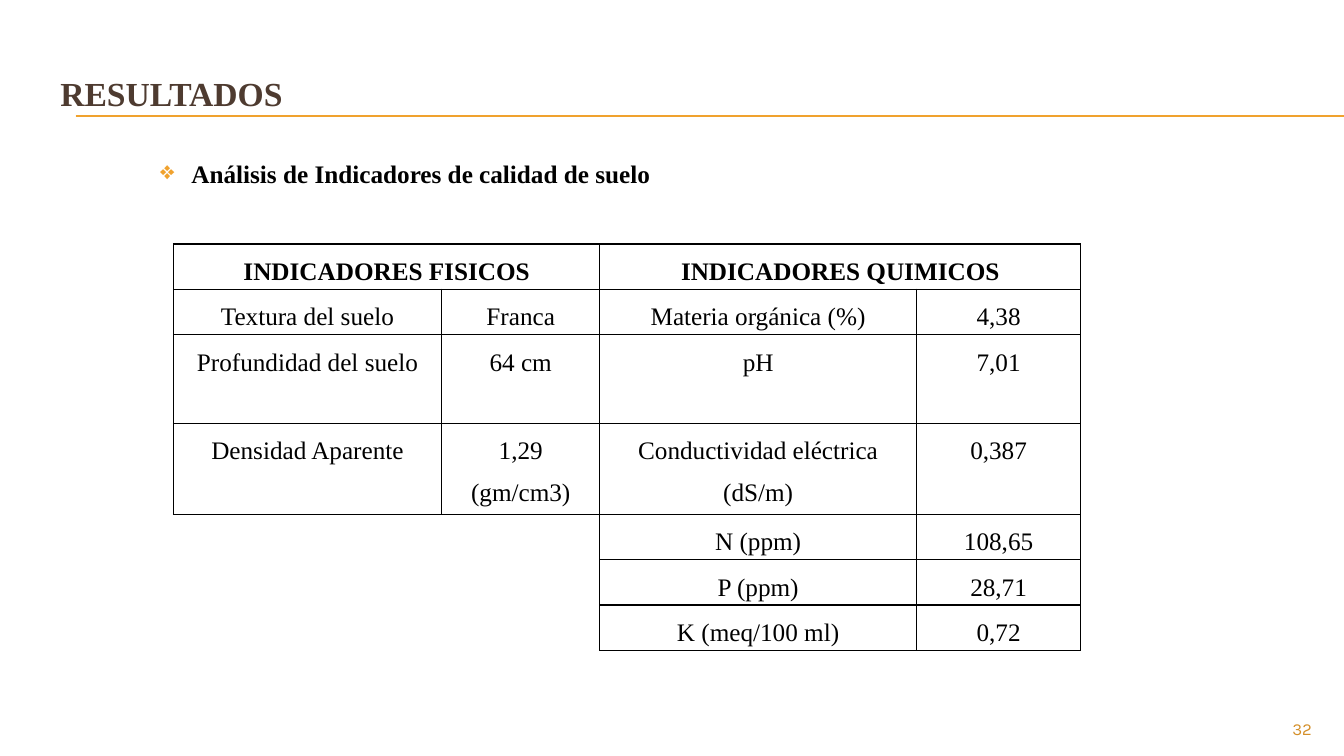
from dataclasses import dataclass

from lxml import etree
from pptx import Presentation
from pptx.dml.color import RGBColor
from pptx.enum.shapes import MSO_CONNECTOR
from pptx.enum.text import MSO_ANCHOR, PP_ALIGN
from pptx.oxml.ns import qn
from pptx.util import Inches, Pt

STRAIGHT = MSO_CONNECTOR.STRAIGHT
MIDDLE, TOP = MSO_ANCHOR.MIDDLE, MSO_ANCHOR.TOP
LEFT, CENTER, RIGHT = PP_ALIGN.LEFT, PP_ALIGN.CENTER, PP_ALIGN.RIGHT


@dataclass(frozen=True)
class Theme:
    serif: str = "Times New Roman"
    sans: str = "Karla"
    brown: str = "4E3B30"
    gold: str = "F0A22E"
    dark_gold: str = "D48F29"
    black: str = "000000"
    title_size: int = 24
    body_size: int = 18
    number_size: int = 12
    line_width: float = 0.75
    border_width: int = 1


THEME = Theme()
COLUMN_WIDTHS = [2.66, 1.57, 3.14, 1.63]
ROW_HEIGHTS = [0.44, 0.44, 0.88, 0.88, 0.44, 0.44, 0.44]
HEADINGS = ["INDICADORES FISICOS", "INDICADORES QUIMICOS"]
PHYSICAL = [
    ("Textura del suelo", "Franca"),
    ("Profundidad del suelo", "64 cm"),
    ("Densidad Aparente", "1,29 (gm/cm3)"),
]
CHEMICAL = [
    ("Materia orgánica (%)", "4,38"),
    ("pH", "7,01"),
    ("Conductividad eléctrica (dS/m)", "0,387"),
    ("N (ppm)", "108,65"),
    ("P (ppm)", "28,71"),
    ("K (meq/100 ml)", "0,72"),
]


def add_run(paragraph, wording, size, color, bold=False, font=THEME.serif):
    run = paragraph.add_run()
    run.text = wording
    run.font.name = font
    run.font.size = Pt(size)
    run.font.bold = bold
    run.font.color.rgb = RGBColor.from_string(color)


def add_text_area(slide, box, align=LEFT, anchor=TOP):
    frame = slide.shapes.add_textbox(*map(Inches, box)).text_frame
    frame.word_wrap = True
    frame.vertical_anchor = anchor
    paragraph = frame.paragraphs[0]
    paragraph.alignment = align
    return paragraph


def add_title_rules(slide, box):
    left, top, width, gap = box
    for y in (top, top + gap):
        rule = slide.shapes.add_connector(
            STRAIGHT, Inches(left), Inches(y), Inches(left + width), Inches(y)
        )
        rule.line.color.rgb = RGBColor.from_string(THEME.gold)
        rule.line.width = Pt(THEME.line_width)
        etree.SubElement(rule._element.spPr, qn("a:effectLst"))


def add_title(slide, box):
    title = add_text_area(slide, box, anchor=MIDDLE)
    add_run(title, "RESULTADOS", THEME.title_size, THEME.brown, bold=True)


def add_page_number(slide, box):
    number = add_text_area(slide, box, align=RIGHT)
    add_run(number, "32", THEME.number_size, THEME.dark_gold, font=THEME.sans)


def add_subtitle(slide, box):
    subtitle = add_text_area(slide, box)
    properties = subtitle._p.get_or_add_pPr()
    properties.set("marL", str(Inches(0.31)))
    properties.set("indent", str(Inches(-0.31)))
    bullet_color = etree.SubElement(properties, qn("a:buClr"))
    etree.SubElement(bullet_color, qn("a:srgbClr"), val=THEME.gold)
    etree.SubElement(properties, qn("a:buChar"), char="❖")
    add_run(subtitle, "Análisis de Indicadores de calidad de suelo",
            THEME.body_size, THEME.black, bold=True)


def set_borders(cell, drawn_sides):
    properties = cell._tc.get_or_add_tcPr()
    for position, side in enumerate("LRTB"):
        border = etree.Element(qn(f"a:ln{side}"), w=str(Pt(THEME.border_width)))
        if side in drawn_sides:
            paint = etree.SubElement(border, qn("a:solidFill"))
            etree.SubElement(paint, qn("a:srgbClr"), val=THEME.black)
        else:
            etree.SubElement(border, qn("a:noFill"))
        properties.insert(position, border)


def fill_cell(cell, wording, bold):
    paragraph = cell.text_frame.paragraphs[0]
    paragraph.alignment = CENTER
    paragraph.line_spacing = 1.5
    add_run(paragraph, wording, THEME.body_size, THEME.black, bold)


def add_indicators(slide, box):
    table = slide.shapes.add_table(
        len(ROW_HEIGHTS), len(COLUMN_WIDTHS), *map(Inches, box)
    ).table
    table.first_row = table.horz_banding = False
    for column, width in zip(table.columns, COLUMN_WIDTHS):
        column.width = Inches(width)
    for row, height in zip(table.rows, ROW_HEIGHTS):
        row.height = Inches(height)

    last_physical = len(PHYSICAL)
    for r in range(len(ROW_HEIGHTS)):
        for c in range(len(COLUMN_WIDTHS)):
            cell = table.cell(r, c)
            cell.fill.background()
            cell.margin_left = cell.margin_right = Inches(0.07)
            cell.margin_top = cell.margin_bottom = 0
            sides = "LRTB"
            if c < 2 and r > last_physical:
                sides = ("T" if r == last_physical + 1 else "") + ("R" if c == 1 else "")
            set_borders(cell, sides)

    for first_column, heading, indicators in zip((0, 2), HEADINGS, (PHYSICAL, CHEMICAL)):
        header = table.cell(0, first_column)
        header.merge(table.cell(0, first_column + 1))
        fill_cell(header, heading, bold=True)
        for r, indicator in enumerate(indicators, start=1):
            for c, wording in enumerate(indicator, start=first_column):
                fill_cell(table.cell(r, c), wording, bold=False)


def build_results_slide(presentation):
    slide = presentation.slides.add_slide(presentation.slide_layouts[6])
    add_title_rules(slide, (0.75, 1.15, 12.58, 0.01))
    add_title(slide, (0.5, 0.46, 4.97, 0.92))
    add_page_number(slide, (12, 7.08, 1.11, 0.27))
    add_indicators(slide, (1.72, 2.42, sum(COLUMN_WIDTHS), sum(ROW_HEIGHTS)))
    add_subtitle(slide, (1.49, 1.52, 5.66, 0.4))


def main():
    presentation = Presentation()
    presentation.slide_width = Inches(13.33)
    presentation.slide_height = Inches(7.5)
    build_results_slide(presentation)
    presentation.save("out.pptx")


if __name__ == "__main__":
    main()
